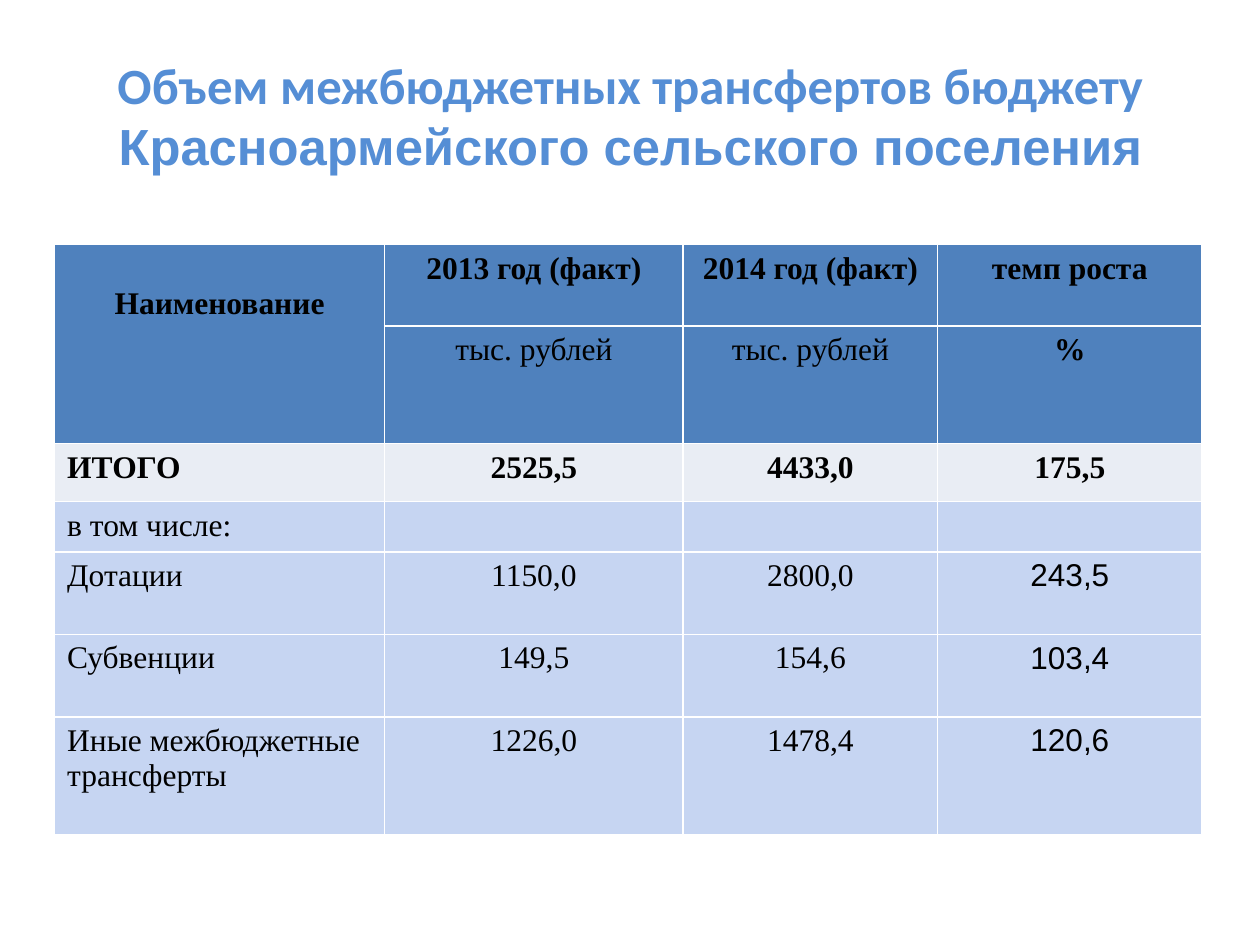
from lxml.etree import SubElement
from pptx import Presentation
from pptx.dml.color import RGBColor
from pptx.enum.text import MSO_ANCHOR as Anchor, PP_ALIGN as Align
from pptx.oxml.ns import qn
from pptx.util import Pt

WHITE = RGBColor(0xFF, 0xFF, 0xFF)
BLACK = RGBColor(0x00, 0x00, 0x00)
TITLE_BLUE = RGBColor(0x55, 0x8E, 0xD5)
HEADER_BLUE = RGBColor(0x4F, 0x81, 0xBD)
TOTAL_GREY = RGBColor(0xE9, 0xED, 0xF4)
BODY_BLUE = RGBColor(0xC6, 0xD5, 0xF2)

SERIF, SANS = "Times New Roman", "Arial"
COLUMN_WIDTHS = (188.6, 170.6, 145.4, 151.2)
# Row height, fill, bold flag of each column, texts
ROWS = (
    (46.6, HEADER_BLUE, (True, True, True, True),
     ("Наименование", "2013 год (факт)", "2014 год (факт)", "темп роста")),
    (67.2, HEADER_BLUE, (True, False, False, True),
     ("", "тыс. рублей", "тыс. рублей", "%")),
    (33.1, TOTAL_GREY, (True, True, True, True),
     ("ИТОГО", "2525,5", "4433,0", "175,5")),
    (27, BODY_BLUE, (False,) * 4, ("в том числе:", "", "", "")),
    (47, BODY_BLUE, (False,) * 4, ("Дотации", "1150,0", "2800,0", "243,5")),
    (47.2, BODY_BLUE, (False,) * 4, ("Субвенции", "149,5", "154,6", "103,4")),
    (67.4, BODY_BLUE, (False,) * 4,
     ("Иные межбюджетные трансферты", "1226,0", "1478,4", "120,6")),
)
HEADER_ROWS = 2
FIRST_BODY_ROW = 3


def add_span(para, text, color, **font_format):
    span = para.add_run()
    span.text = text
    span.font.color.rgb = color
    for name, value in font_format.items():
        setattr(span.font, name, value)


def add_title(page):
    box = page.shapes.add_textbox(Pt(36.5), Pt(26), Pt(648), Pt(79))
    frame = box.text_frame
    frame.word_wrap = True
    frame.vertical_anchor = Anchor.MIDDLE
    para = frame.paragraphs[0]
    para.alignment = Align.CENTER
    for text, font in (("Объем межбюджетных трансфертов бюджету ", "Calibri"),
                       ("Красноармейского сельского поселения", SANS)):
        add_span(para, text, TITLE_BLUE, name=font, size=Pt(29), bold=True)


def set_borders(cell):
    properties = cell._tc.get_or_add_tcPr()
    for index, side in enumerate(("a:lnL", "a:lnR", "a:lnT", "a:lnB")):
        line = properties.makeelement(qn(side), {"w": str(Pt(1))})
        properties.insert(index, line)  # borders come before the fill
        fill = SubElement(line, qn("a:solidFill"))
        SubElement(fill, qn("a:srgbClr"), val=str(WHITE))


def fill_cell(cell, text, fill, font, bold, alignment):
    cell.fill.solid()
    cell.fill.fore_color.rgb = fill
    set_borders(cell)
    para = cell.text_frame.paragraphs[0]
    para.alignment = alignment
    if text:
        add_span(para, text, BLACK, name=font, size=Pt(18), bold=bold)


def add_transfer_table(page):
    heights = [row[0] for row in ROWS]
    table = page.shapes.add_table(
        len(ROWS), len(COLUMN_WIDTHS), Pt(31.2), Pt(139.8),
        Pt(sum(COLUMN_WIDTHS)), Pt(sum(heights))).table
    for column, width in zip(table.columns, COLUMN_WIDTHS):
        column.width = Pt(width)

    for r, (height, fill, bolds, texts) in enumerate(ROWS):
        table.rows[r].height = Pt(height)
        for c, (text, bold) in enumerate(zip(texts, bolds)):
            # Growth rates of the body rows are sans serif
            growth = c == 3 and r >= FIRST_BODY_ROW
            label = c == 0 and r >= HEADER_ROWS
            fill_cell(table.cell(r, c), text, fill, SANS if growth else SERIF,
                      bold, Align.LEFT if label else Align.CENTER)

    # The name heading covers both header rows, one line lower
    heading = table.cell(0, 0)
    heading.merge(table.cell(HEADER_ROWS - 1, 0))
    heading.margin_top = Pt(24)


def main():
    deck = Presentation()
    deck.slide_width, deck.slide_height = Pt(720), Pt(540)
    page = deck.slides.add_slide(deck.slide_layouts[6])
    add_title(page)
    add_transfer_table(page)
    deck.save("out.pptx")


if __name__ == "__main__":
    main()
